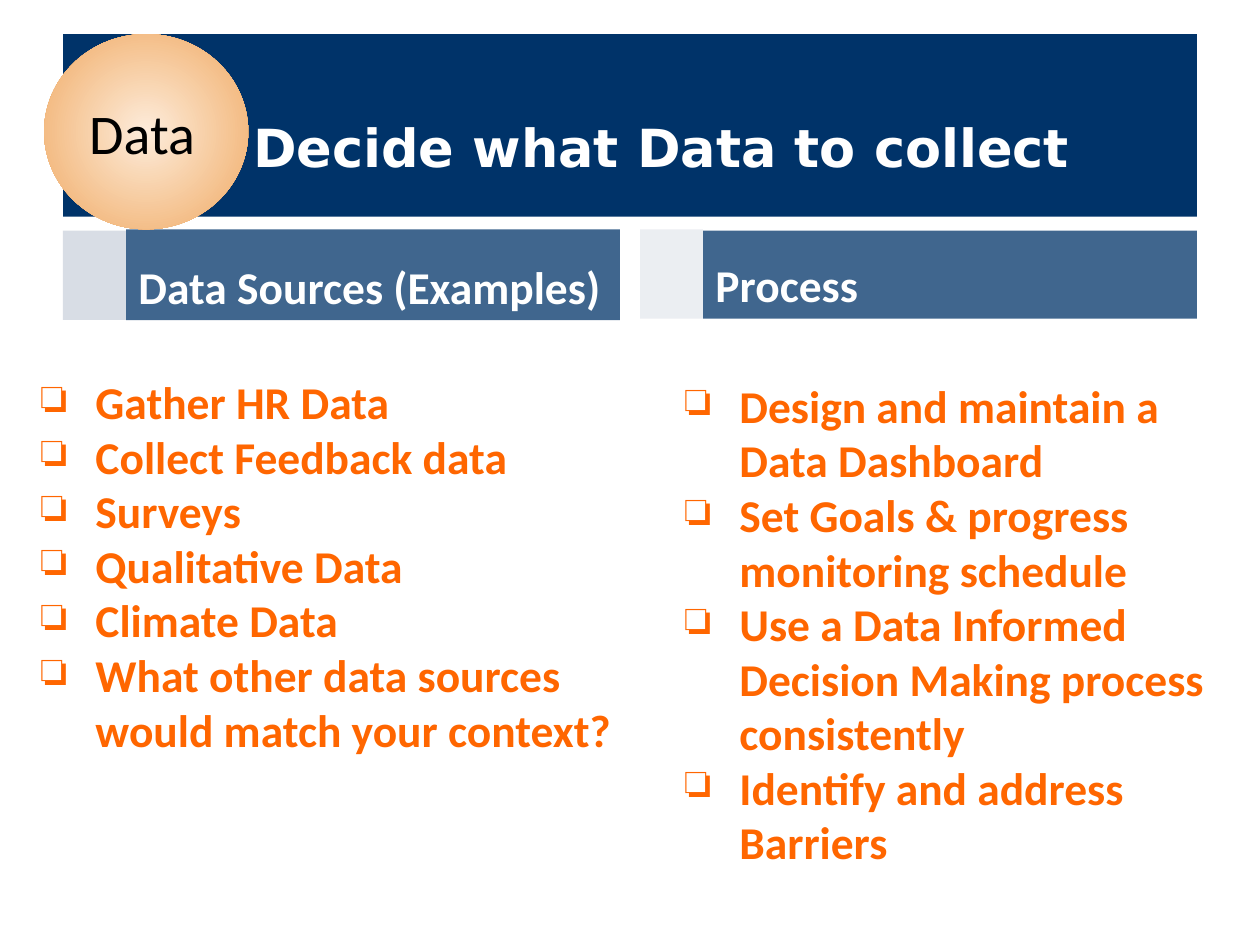
from lxml import etree
from pptx import Presentation
from pptx.dml.color import RGBColor
from pptx.enum.shapes import MSO_SHAPE
from pptx.enum.text import MSO_ANCHOR, MSO_AUTO_SIZE, PP_ALIGN
from pptx.oxml.ns import qn
from pptx.util import Emu, Pt

RECTANGLE, OVAL = MSO_SHAPE.RECTANGLE, MSO_SHAPE.OVAL
TOP, MIDDLE, BOTTOM = MSO_ANCHOR.TOP, MSO_ANCHOR.MIDDLE, MSO_ANCHOR.BOTTOM
LEFT, CENTER = PP_ALIGN.LEFT, PP_ALIGN.CENTER
NO_AUTOFIT = MSO_AUTO_SIZE.NONE
EMU_PER_PX = 9144
NAVY, PALE, WHITE, ORANGE, BLACK = "003369", "D8DDE5", "FFFFFF", "FF6600", "000000"
PEACH, APRICOT = "FDECDB", "F0AA63"

SOURCES = [
    "Gather HR Data",
    "Collect Feedback data",
    "Surveys",
    "Qualitative Data",
    "Climate Data",
    "What other data sources would match your context?",
]
PROCESS = [
    "Design and maintain a Data Dashboard",
    "Set Goals & progress monitoring schedule",
    "Use a Data Informed Decision Making process consistently",
    "Identify and address Barriers",
]


def px(length):
    return Emu(length * EMU_PER_PX)


def color(hex_string):
    return RGBColor.from_string(hex_string)


def apply(target, values):
    for name, value in values.items():
        setattr(target, name, value)


class SlideBuilder:
    heading_font = {"name": "DejaVu Sans", "size": Pt(30), "bold": True}
    body_font = {"name": "Calibri", "size": Pt(26), "bold": True}
    badge_font = {"name": "Calibri", "size": Pt(32), "bold": False}

    def __init__(self, deck):
        self.slide = deck.slides.add_slide(deck.slide_layouts[5])

    def paint(self, shape, fill, opacity=100):
        shape.fill.solid()
        shape.fill.fore_color.rgb = color(fill)
        if opacity < 100:
            tint = shape.fill._xPr.find(".//" + qn("a:srgbClr"))
            etree.SubElement(tint, qn("a:alpha"), val=str(opacity * 1000))

    def set_lines(self, shape, lines, font, ink, insets=(10, 5, 10, 5), anchor=TOP,
                  align=LEFT, spacing=1.0, bullet=None):
        frame = shape.text_frame
        sides = ("margin_left", "margin_top", "margin_right", "margin_bottom")
        apply(frame, dict(zip(sides, map(px, insets))))
        apply(frame, {"word_wrap": True, "auto_size": NO_AUTOFIT, "vertical_anchor": anchor})
        for index, line in enumerate(lines):
            paragraph = frame.add_paragraph() if index else frame.paragraphs[0]
            if bullet:
                self.add_bullet(paragraph, bullet, ink)
            apply(paragraph, {"alignment": align, "line_spacing": spacing,
                              "space_before": Pt(0)})
            run = paragraph.add_run()
            run.text = line
            apply(run.font, font)
            run.font.color.rgb = color(ink)

    def add_bullet(self, paragraph, mark, ink):
        properties = paragraph._p.get_or_add_pPr()
        properties.set("marL", str(px(50)))
        properties.set("indent", str(px(-43)))
        bullet_color = etree.SubElement(properties, qn("a:buClr"))
        etree.SubElement(bullet_color, qn("a:srgbClr"), val=ink)
        etree.SubElement(properties, qn("a:buChar"), char=mark)

    def title(self, box, text):
        heading = self.slide.shapes.title
        apply(heading, dict(zip(("left", "top", "width", "height"), map(px, box))))
        self.paint(heading, NAVY)
        self.set_lines(heading, [text], self.heading_font, WHITE, (60, 45, 10, 5),
                       MIDDLE, CENTER, 0.9)

    def shape(self, kind, box):
        shape = self.slide.shapes.add_shape(kind, *map(px, box))
        shape.shadow.inherit = False
        shape.line.fill.background()
        return shape

    def block(self, box, fill, opacity=100):
        block = self.shape(RECTANGLE, box)
        self.paint(block, fill, opacity)
        return block

    def column_header(self, box, text):
        self.set_lines(self.block(box, NAVY, 75), [text], self.body_font, WHITE,
                       anchor=BOTTOM, spacing=0.9)

    def text(self, box, lines, font, ink, **layout):
        self.set_lines(self.slide.shapes.add_textbox(*map(px, box)), lines, font, ink, **layout)

    def glowing_disc(self, box, center, edge):
        fill = self.shape(OVAL, box).fill
        fill.gradient()
        for stop, position, hue in zip(fill.gradient_stops, (0, 1), (center, edge)):
            stop.position = position
            stop.color.rgb = color(hue)
        gradient = fill._xPr.find(qn("a:gradFill"))
        gradient.remove(gradient.find(qn("a:lin")))
        radial = etree.SubElement(gradient, qn("a:path"), {"path": "circle"})
        etree.SubElement(radial, qn("a:fillToRect"), dict.fromkeys("ltrb", "50000"))


def main():
    deck = Presentation()
    deck.slide_width, deck.slide_height = px(1000), px(750)
    builder = SlideBuilder(deck)
    builder.title((50, 27, 900, 145), "Decide what Data to collect")
    builder.block((50, 183, 50, 71), PALE)
    builder.block((508, 182, 50, 71), PALE, 49)
    builder.column_header((100, 182, 392, 72), "Data Sources (Examples)")
    builder.column_header((558, 183, 392, 70), "Process")
    builder.text((527, 295, 455, 402), PROCESS, builder.body_font, ORANGE, bullet="❏")
    builder.text((16, 287, 484, 327), SOURCES, builder.body_font, ORANGE,
                 insets=(10, 10, 10, 10), bullet="❏")
    builder.glowing_disc((35, 27, 162, 155), PEACH, APRICOT)
    builder.text((61, 68, 162, 74), ["Data"], builder.badge_font, BLACK,
                 insets=(10, 10, 10, 10))
    deck.save("out.pptx")


if __name__ == "__main__":
    main()
